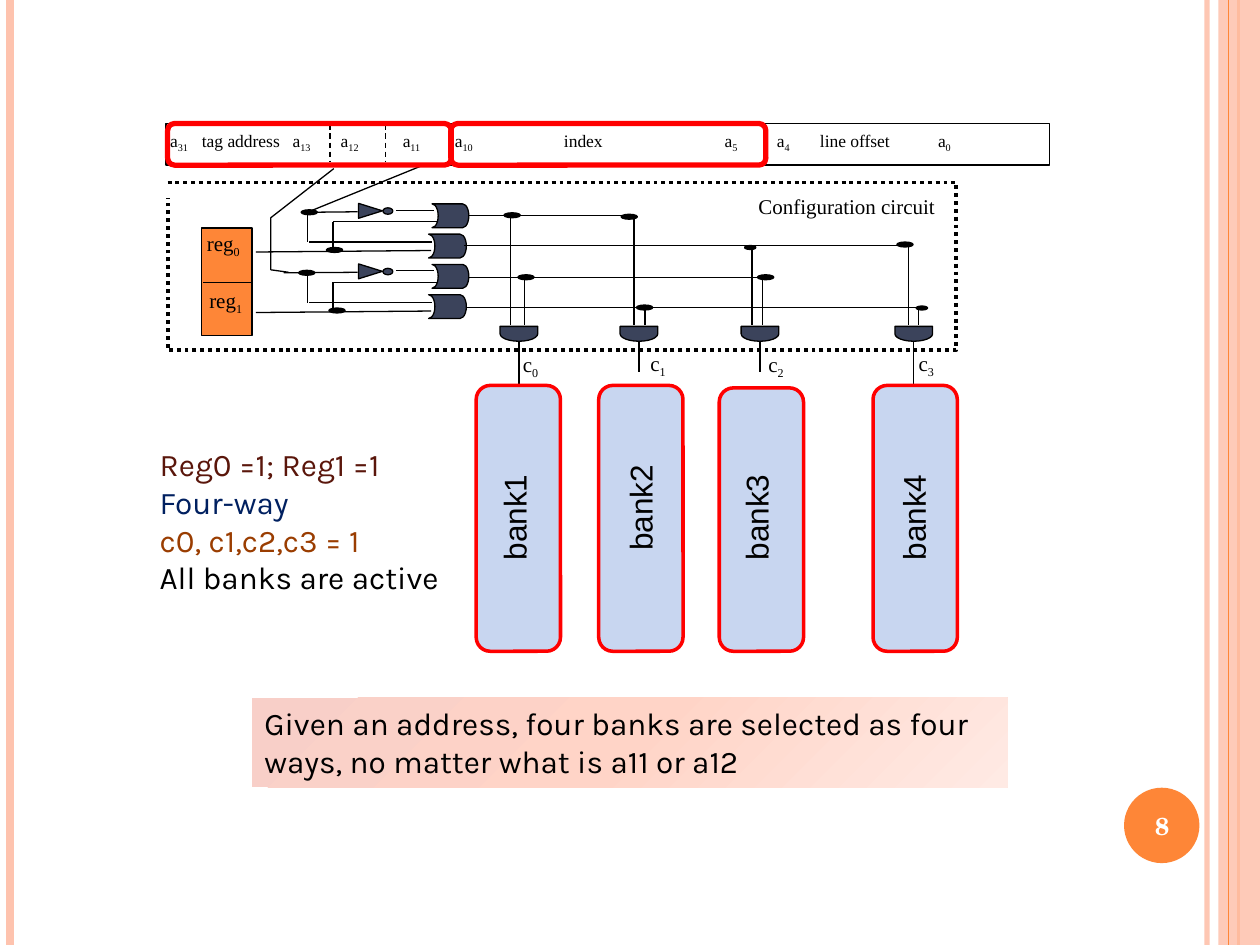
import copy
import pptx
import pptx.util
import pptx.dml.color
import pptx.enum.dml
import pptx.enum.shapes
import pptx.enum.text
import pptx.oxml
import pptx.oxml.ns

Cm, Pt = pptx.util.Cm, pptx.util.Pt
Rgb = pptx.dml.color.RGBColor.from_string
Kind = pptx.enum.shapes.MSO_SHAPE
Dash = pptx.enum.dml.MSO_LINE
Align = pptx.enum.text.PP_ALIGN
Anchor = pptx.enum.text.MSO_ANCHOR
qn = pptx.oxml.ns.qn


class Theme:
    black, white, red = "000000", "FFFFFF", "FF0000"
    pink, orange, navy, blue = "FEC3AE", "FE8637", "3B435B", "C8D6F0"
    maroon, deep, brown = "5A160B", "002060", "9A3D01"
    blend = ("F8CFC8", "FFD4C7", "FFEAE4")
    serif, sans, body, page = "Times New Roman", "Arial", "Karla", "TeX Gyre Schola"
    small, label, number, large = 10, 12, 14, 18


deck = pptx.Presentation()
deck.slide_width, deck.slide_height = Cm(25.4), Cm(19.05)
slide = deck.slides.add_slide(deck.slide_layouts[6])
shapes = slide.shapes


def box(kind, x, y, w, h, fill=None, edge=None, width=0.75, turn=0):
    place = Cm(x), Cm(y), Cm(w), Cm(h)
    if kind is None:
        return shapes.add_textbox(*place)
    shape = shapes.add_shape(kind, *place)
    shape.shadow.inherit = False
    shape.rotation = turn
    if fill:
        shape.fill.solid()
        shape.fill.fore_color.rgb = Rgb(fill)
    else:
        shape.fill.background()
    if edge:
        shape.line.color.rgb = Rgb(edge)
        shape.line.width = Pt(width)
    else:
        shape.line.fill.background()
    return shape


def wire(x1, y1, x2, y2, color=Theme.black, width=0.75, dash=None):
    line = shapes.add_connector(pptx.enum.shapes.MSO_CONNECTOR.STRAIGHT,
                                Cm(x1), Cm(y1), Cm(x2), Cm(y2))
    line.line.color.rgb = Rgb(color)
    line.line.width = Pt(width)
    if dash:
        line.line.dash_style = dash
    line.element.spPr.append(pptx.oxml.parse_xml(
        '<a:effectLst xmlns:a="http://schemas.openxmlformats.org/drawingml/2006/main"/>'))
    return line


edge = wire(24.33, 0, 24.33, 19.05, Theme.pink, 3)
wire(0.2, 0, 0.2, 19.05, Theme.pink, 4.5)
wire(24.97, 0, 24.97, 19.05, Theme.orange, 1.5)
rail = box(Kind.RECTANGLE, 24.56, 0, 0.84, 19.05, Theme.pink)
wire(24.77, 0, 24.77, 19.05, Theme.orange)
for shape, clear in ((edge, "93000"), (rail, "87000")):
    tint = next(shape.element.spPr.iter(qn("a:srgbClr")))
    tint.append(tint.makeelement(qn("a:alpha"), {"val": clear}))
box(Kind.OVAL, 22.66, 15.88, 1.52, 1.52, Theme.orange)

for x in (9.09, 15.42):
    wire(x, 2.51, x, 3.25, width=1.25)
for x in (7.77, 6.65):
    wire(x, 2.51, x, 3.25, dash=Dash.DASH)
box(Kind.RECTANGLE, 4.06, 4.6, 1.02, 2.16, Theme.orange, Theme.black)
wire(4.09, 5.69, 5.05, 5.69)

dots = []
for top, start, left, right in ((0, 6.15, 6.07, 6.58), (1.22, 5.72, 6.02, 6.63)):
    for kind, x, y, w, h, turn in (
            (Kind.FLOWCHART_STORED_DATA, 8.71, 4.11, 0.74, 0.48, 180),
            (Kind.FLOWCHART_STORED_DATA, 8.64, 4.72, 0.76, 0.48, 180),
            (Kind.FLOWCHART_MERGE, 7.32, 4.01, 0.3, 0.48, 270),
            (Kind.FLOWCHART_CONNECTOR, 7.72, 4.19, 0.2, 0.13, 0)):
        box(kind, x, y + top, w, h, Theme.navy, Theme.black, turn=turn)
    for x1, y1, x2, y2 in (
            (7.98, 4.24, 8.74, 4.24), (8.81, 4.47, 6.71, 4.47),
            (7.21, 4.27, start, 4.28), (8.69, 5.05, 5.16, 5.08),
            (8.71, 4.88, 6.22, 4.88), (6.2, 4.27, 6.2, 4.88),
            (6.71, 4.47, 6.71, 5.05)):
        wire(x1, y1 + top, x2, y2 + top)
    dots += [(left, 4.23 + top, 0.33, 0.1), (right, 4.99 + top, 0.33, 0.1)]

for x1, x2, y in ((9.4, 18.49, 6.2), (9.45, 15.34, 5.59),
                  (9.35, 18.29, 4.95), (9.45, 12.78, 4.34)):
    wire(x1, y, x2, y)

texts = []
banks = (
    (10.46, 7.82, 10.29, 4.37, 10.57, 5.61, 10.54, 7.09, 9.6, 7.77, 9.73, 8.46),
    (12.88, 7.49, 12.78, 4.37, 13.0, 6.22, 13.11, 7.06, 12.07, 7.77, 12.27, 8.26),
    (15.32, 7.49, 15.16, 4.98, 15.37, 5.61, 15.49, 7.09, 14.5, 7.82, 14.61, 8.46),
    (18.42, 7.82, 18.31, 4.93, 18.52, 6.22, 18.52, 7.06, 17.6, 7.77, 17.78, 8.46))
for i, (mid, end, left, high, right, low, cx, cy, bx, by, tx, ty) in enumerate(banks):
    mark = box(Kind.RECTANGLE, cx, cy, 1.35, 0.51, Theme.white, Theme.white)
    texts.append((mark, Theme.serif, Theme.label, Align.LEFT, (0, 0),
                  [(Theme.black, ["c", str(i)])]))
    wire(mid, 6.88, mid, end)
    box(Kind.FLOWCHART_DELAY, mid - 0.15, 6.35, 0.3, 0.76, Theme.navy, Theme.black, turn=90)
    wire(left, high, left, 6.55)
    wire(right, low, right, 6.55)
    box(Kind.ROUNDED_RECTANGLE, bx, by, 1.7, 13.13 - by, Theme.blue, Theme.red, 2)
    name = box(None, tx, ty, 1.27, 2.97)
    name.text_frame._txBody.bodyPr.set("vert", "vert270")
    texts.append((name, Theme.sans, Theme.large, Align.LEFT, (0.25, 0.13),
                  [(Theme.black, [f"bank{i + 1}"])]))

dots += [(10.16, 4.29, 0.33, 0.1), (12.52, 4.32, 0.33, 0.1),
         (15.01, 4.95, 0.23, 0.08), (18.08, 4.88, 0.33, 0.1),
         (10.44, 5.54, 0.33, 0.1), (12.83, 6.15, 0.33, 0.1),
         (15.27, 5.54, 0.33, 0.1), (18.47, 6.17, 0.23, 0.08)]
for dot in dots:
    box(Kind.OVAL, *dot, Theme.black, Theme.black)

for points, width, dash in (
        (((3.38, 3.68), (19.28, 3.68), (19.28, 7.06), (3.38, 7.06), (3.38, 3.99)),
         2.25, Dash.ROUND_DOT),
        (((6.73, 3.4), (5.46, 4.39), (5.46, 5.44), (5.82, 5.49)), 0.75, Dash.SOLID)):
    spots = [(Cm(x), Cm(y)) for x, y in points]
    draft = shapes.build_freeform(*spots[0])
    draft.add_line_segments(spots[1:], close=False)
    trace = draft.convert_to_shape()
    trace.shadow.inherit = False
    trace.fill.background()
    trace.line.color.rgb = Rgb(Theme.black)
    trace.line.width = Pt(width)
    trace.line.dash_style = dash
wire(8.53, 3.33, 6.17, 4.29)

row = box(Kind.RECTANGLE, 3.35, 2.49, 17.81, 0.84, None, Theme.black)
for x, w in ((9.09, 6.35), (3.38, 5.72)):
    box(Kind.ROUNDED_RECTANGLE, x, 2.49, w, 0.84, None, Theme.red, 3)

note = box(Kind.RECTANGLE, 5.08, 14.07, 15.24, 1.8, Theme.white)
note.fill.gradient()
note.fill.gradient_angle = 315
stops = next(note.element.iter(qn("a:gsLst")))
stops.insert(1, copy.deepcopy(stops[0]))
for stop, color, place in zip(note.fill.gradient_stops, Theme.blend, (0, 0.5, 1)):
    stop.color.rgb = Rgb(color)
    stop.position = place

page = box(None, 22.58, 15.93, 1.7, 1.45)
texts += [
    (box(None, 4.17, 4.65, 0.86, 0.97), Theme.serif, Theme.label, Align.LEFT, (0, 0),
     [(Theme.black, ["reg", "0"])]),
    (box(None, 4.22, 5.79, 0.86, 0.94), Theme.serif, Theme.label, Align.LEFT, (0, 0),
     [(Theme.black, ["reg", "1"])]),
    (box(None, 11.99, 3.91, 6.86, 0.46), Theme.serif, Theme.label, Align.RIGHT, (0, 0),
     [(Theme.black, ["Configuration circuit"])]),
    (row, Theme.serif, Theme.small, Align.LEFT, (0.08, 0.13),
     [(Theme.black, ["a", "31", "\ttag address\ta", "13", "\ta", "12", "\ta", "11",
                     "\ta", "10", "\tindex\ta", "5", "\ta", "4",
                     "\tline offset\ta", "0"])]),
    (box(None, 2.97, 8.84, 6.78, 3.33), Theme.body, Theme.large, Align.LEFT, (0.25, 0.13),
     [(Theme.maroon, ["Reg0 =1; Reg1 =1"]), (Theme.deep, ["Four-way"]),
      (Theme.brown, ["c0, c1,c2,c3 = 1"]), (Theme.black, ["All banks are active"])]),
    (note, Theme.body, Theme.large, Align.LEFT, (0.25, 0.13),
     [(Theme.black, ["Given an address, four banks are selected as four ways, "
                     "no matter what is a11 or a12"])]),
    (page, Theme.page, Theme.number, Align.CENTER, (0.25, 0.13), [(Theme.white, ["8"])])]

for shape, font, size, align, (side, top), lines in texts:
    frame = shape.text_frame
    frame.word_wrap = True
    frame.vertical_anchor = Anchor.MIDDLE if shape is page else Anchor.TOP
    frame.margin_left = frame.margin_right = Cm(side)
    frame.margin_top = frame.margin_bottom = Cm(top)
    for i, (color, words) in enumerate(lines):
        para = frame.add_paragraph() if i else frame.paragraphs[0]
        para.alignment = align
        for j, word in enumerate(words):
            run = para.add_run()
            run.text = word
            run.font.name, run.font.size = font, Pt(size)
            run.font.color.rgb = Rgb(color)
            run.font.bold = shape is page
            if j % 2:
                run.font._element.set("baseline", "-25000")

props = row.text_frame.paragraphs[0]._p.get_or_add_pPr()
tabs = props.makeelement(qn("a:tabLst"), {})
props.append(tabs)
for x in (0.64, 2.47, 3.44, 4.69, 5.74, 7.94, 11.18, 12.23, 13.1, 15.48):
    tabs.append(tabs.makeelement(qn("a:tab"), {"pos": str(Cm(x)), "algn": "l"}))

deck.save("out.pptx")
